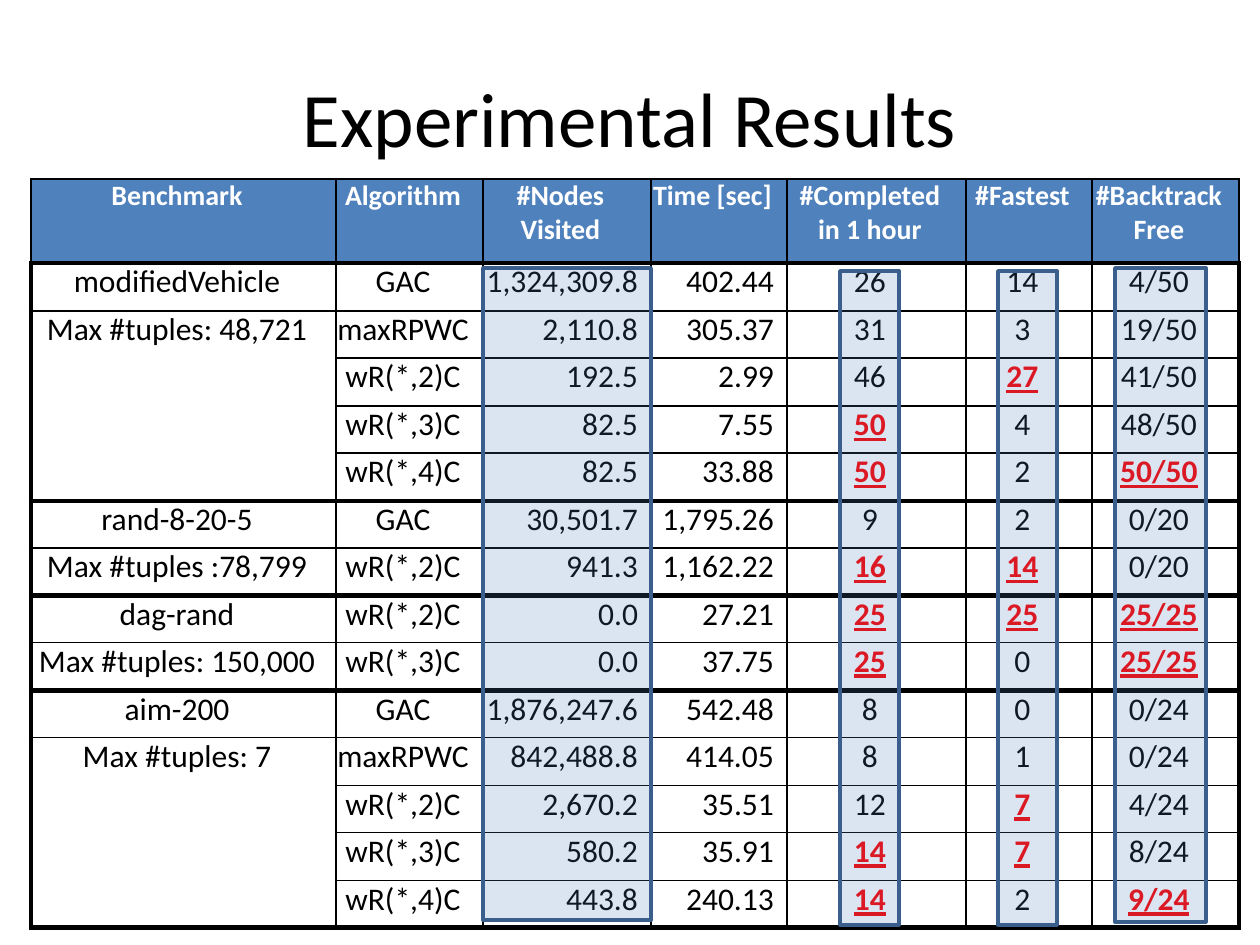
from lxml import etree
from pptx import Presentation
from pptx.dml.color import RGBColor
from pptx.enum.shapes import MSO_SHAPE
from pptx.enum.text import MSO_ANCHOR, PP_ALIGN
from pptx.oxml.ns import qn
from pptx.util import Emu, Pt

COLORS = {"black": "000000", "white": "FFFFFF", "blue": "4F81BD",
          "outline": "3A5F8C", "red": "FF0000"}
FONT = "Calibri"
THIN, THICK = Pt(1), Pt(3)


def px(length):
    return Emu(round(length * 914400 / 126))


def add_run(paragraph, text, size, color, bold=False, underline=False):
    run = paragraph.add_run()
    run.text = text
    run.font.name = FONT
    run.font.size = Pt(size)
    run.font.bold = bold
    run.font.underline = underline
    run.font.color.rgb = RGBColor.from_string(COLORS[color])


presentation = Presentation()
presentation.slide_width = px(1260)
presentation.slide_height = px(945)
slide = presentation.slides.add_slide(presentation.slide_layouts[6])

# Title
title = slide.shapes.add_textbox(px(63), px(38), px(1134), px(157))
title.text_frame.word_wrap = True
title.text_frame.vertical_anchor = MSO_ANCHOR.MIDDLE
paragraph = title.text_frame.paragraphs[0]
paragraph.alignment = PP_ALIGN.CENTER
add_run(paragraph, "Experimental Results", 44, "black")

# Results; a leading "!" marks the best value of a benchmark
ROWS = [
    ["Benchmark", "Algorithm", "#Nodes\nVisited", "Time [sec]",
     "#Completed in 1 hour", "#Fastest", "#Backtrack\nFree"],
    ["modifiedVehicle", "GAC", "1,324,309.8", "402.44", "26", "14", "4/50"],
    ["Max #tuples: 48,721", "maxRPWC", "2,110.8", "305.37", "31", "3", "19/50"],
    ["", "wR(*,2)C", "192.5", "2.99", "46", "!27", "41/50"],
    ["", "wR(*,3)C", "82.5", "7.55", "!50", "4", "48/50"],
    ["", "wR(*,4)C", "82.5", "33.88", "!50", "2", "!50/50"],
    ["rand-8-20-5", "GAC", "30,501.7", "1,795.26", "9", "2", "0/20"],
    ["Max #tuples :78,799", "wR(*,2)C", "941.3", "1,162.22", "!16", "!14", "0/20"],
    ["dag-rand", "wR(*,2)C", "0.0", "27.21", "!25", "!25", "!25/25"],
    ["Max #tuples: 150,000", "wR(*,3)C", "0.0", "37.75", "!25", "0", "!25/25"],
    ["aim-200", "GAC", "1,876,247.6", "542.48", "8", "0", "0/24"],
    ["Max #tuples: 7", "maxRPWC", "842,488.8", "414.05", "8", "1", "0/24"],
    ["", "wR(*,2)C", "2,670.2", "35.51", "12", "!7", "4/24"],
    ["", "wR(*,3)C", "580.2", "35.91", "!14", "!7", "8/24"],
    ["", "wR(*,4)C", "443.8", "240.13", "!14", "2", "!9/24"],
]
COLUMN_WIDTHS = [305, 147, 168, 136, 179, 126, 147]
ROW_HEIGHTS = [84] + [48, 47] * 7
GROUP_ENDS = {0, 5, 7, 9, 14}
MERGED_ROWS = [(2, 5), (11, 14)]
NUMBER_COLUMNS = {2, 3}
LAST_COLUMN = len(COLUMN_WIDTHS) - 1

table = slide.shapes.add_table(len(ROWS), len(COLUMN_WIDTHS), px(31), px(179),
                               px(sum(COLUMN_WIDTHS)), px(sum(ROW_HEIGHTS))).table
table.first_row = False
table.horz_banding = False
for column, width in zip(table.columns, COLUMN_WIDTHS):
    column.width = px(width)
for row, height in zip(table.rows, ROW_HEIGHTS):
    row.height = px(height)
for first, last in MERGED_ROWS:
    table.cell(first, 0).merge(table.cell(last, 0))

for row_index, values in enumerate(ROWS):
    header = row_index == 0
    for column_index, value in enumerate(values):
        cell = table.cell(row_index, column_index)
        cell.margin_left = cell.margin_top = cell.margin_bottom = 0
        cell.margin_right = px(13)

        # Borders: thick around each benchmark, thin inside
        bottom_row = row_index + (cell.span_height - 1 if cell.is_merge_origin else 0)
        borders = {
            "a:lnL": THICK if column_index == 0 and not header else THIN,
            "a:lnR": THICK if column_index == LAST_COLUMN and not header else THIN,
            "a:lnT": THICK if row_index - 1 in GROUP_ENDS else THIN,
            "a:lnB": THICK if bottom_row in GROUP_ENDS else THIN,
        }
        if cell.is_spanned:
            del borders["a:lnT"]
            if row_index not in GROUP_ENDS:
                del borders["a:lnB"]
        properties = cell._tc.get_or_add_tcPr()
        for tag, width in borders.items():
            line = etree.SubElement(properties, qn(tag), w=str(width))
            line_fill = etree.SubElement(line, qn("a:solidFill"))
            etree.SubElement(line_fill, qn("a:srgbClr"), val=COLORS["black"])

        if header:
            cell.fill.solid()
            cell.fill.fore_color.rgb = RGBColor.from_string(COLORS["blue"])
        else:
            cell.fill.background()
        if cell.is_spanned:
            continue

        # Text
        best = value.startswith("!")
        numeric = column_index in NUMBER_COLUMNS and not header
        for line_index, text in enumerate(value.lstrip("!").split("\n")):
            frame = cell.text_frame
            paragraph = frame.add_paragraph() if line_index else frame.paragraphs[0]
            paragraph.alignment = PP_ALIGN.RIGHT if numeric else PP_ALIGN.CENTER
            if header:
                add_run(paragraph, text, 16, "white", bold=True)
            else:
                add_run(paragraph, text, 18, "red" if best else "black", best, best)

# Translucent column highlights
HIGHLIGHTS = [(483, 268, 168, 652), (1115, 268, 91, 654),
              (840, 271, 59, 654), (998, 271, 59, 654)]
for left, top, width, height in HIGHLIGHTS:
    shape = slide.shapes.add_shape(MSO_SHAPE.RECTANGLE, px(left), px(top),
                                   px(width), px(height))
    shape.shadow.inherit = False
    shape.fill.solid()
    shape.fill.fore_color.rgb = RGBColor.from_string(COLORS["blue"])
    fill_color = shape._element.spPr.find(qn("a:solidFill"))[0]
    etree.SubElement(fill_color, qn("a:alpha"), val="20000")
    shape.line.color.rgb = RGBColor.from_string(COLORS["outline"])
    shape.line.width = Pt(2)

presentation.save("out.pptx")
